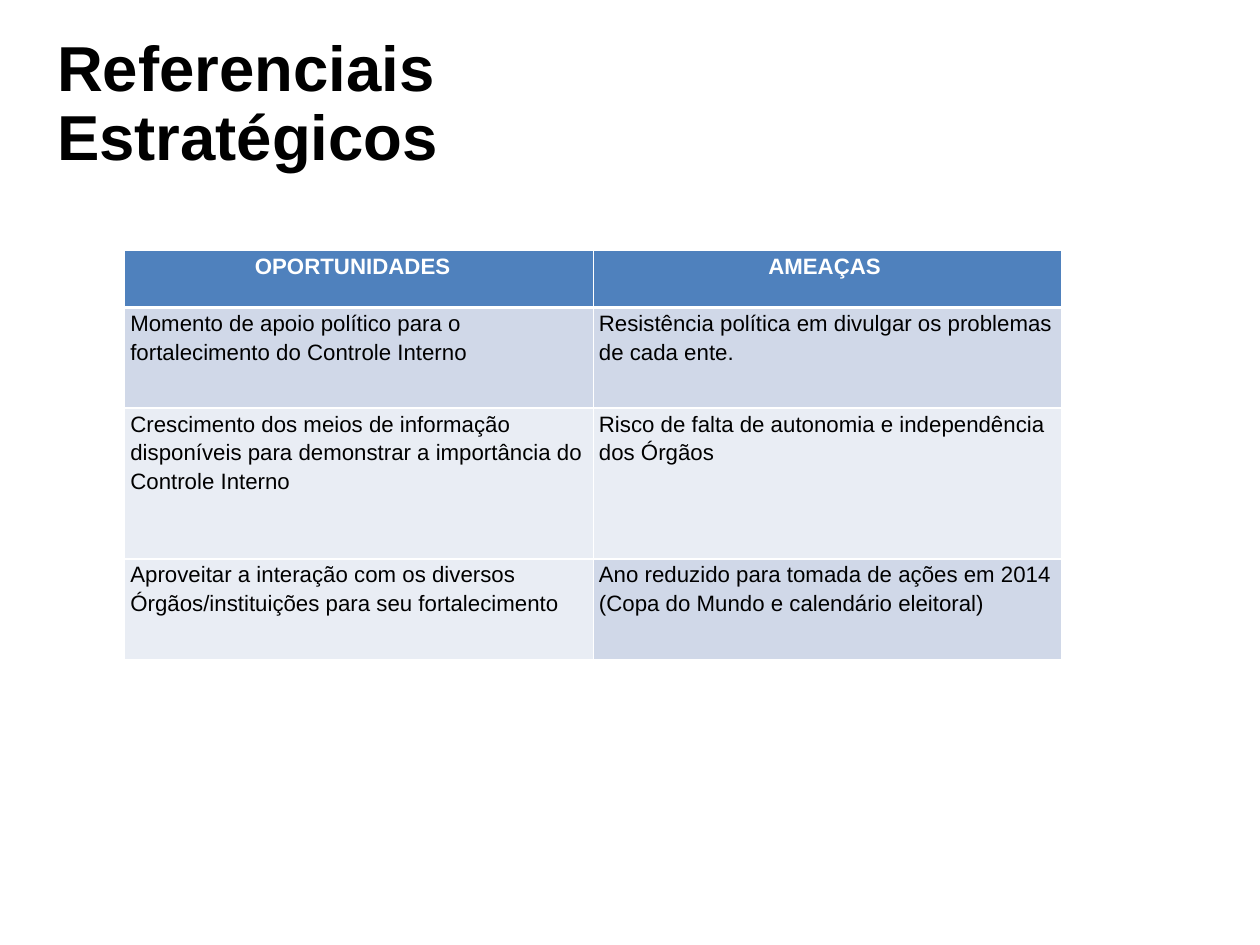
from lxml import etree
from pptx import Presentation
from pptx.dml.color import RGBColor
from pptx.enum.text import MSO_ANCHOR, MSO_AUTO_SIZE, PP_ALIGN
from pptx.oxml.ns import qn
from pptx.util import Inches, Pt

LEFT, CENTER = PP_ALIGN.LEFT, PP_ALIGN.CENTER
MIDDLE, TOP = MSO_ANCHOR.MIDDLE, MSO_ANCHOR.TOP
NO_FIT = MSO_AUTO_SIZE.NONE

WHITE, BLACK = "FFFFFF", "000000"
BLUE, MID, PALE = "4F81BD", "D0D8E8", "E9EDF4"


def style(font, size, color, bold):
    font.name = "Arial"
    font.size = Pt(size)
    font.bold = bold
    font.color.rgb = RGBColor.from_string(color)


def border(cell, side, width):
    line = etree.SubElement(cell._tc.get_or_add_tcPr(), qn(f"a:ln{side}"), w=str(Pt(width)))
    fill = etree.SubElement(line, qn("a:solidFill"))
    etree.SubElement(fill, qn("a:srgbClr"), val=WHITE)


deck = Presentation()
deck.slide_width = Inches(28 / 2.54)
deck.slide_height = Inches(21 / 2.54)
slide = deck.slides.add_slide(deck.slide_layouts[5])

title = slide.shapes.title
title.left, title.top = Inches(0.5), Inches(0.3)
title.width, title.height = Inches(9), Inches(1.25)
frame = title.text_frame
frame.auto_size = NO_FIT
frame.word_wrap = False
frame.vertical_anchor = MIDDLE
frame.margin_left = frame.margin_right = frame.margin_top = frame.margin_bottom = 0
para = frame.paragraphs[0]
para.alignment = LEFT
para.line_spacing = 0.9
for index, word in enumerate(["Referenciais", "Estratégicos"]):
    if index:
        para.add_line_break()
    run = para.add_run()
    run.text = word
    style(run.font, 40, BLACK, True)

rows = [
    (0.5, [("OPORTUNIDADES", BLUE), ("AMEAÇAS", BLUE)]),
    (0.88, [
        ("Momento de apoio político para o fortalecimento do Controle Interno", MID),
        ("Resistência política em divulgar os problemas de cada ente.", MID),
    ]),
    (1.32, [
        ("Crescimento dos meios de informação disponíveis para demonstrar "
         "a importância do Controle Interno", PALE),
        ("Risco de falta de autonomia e independência dos Órgãos", PALE),
    ]),
    (0.88, [
        ("Aproveitar a interação com os diversos Órgãos/instituições "
         "para seu fortalecimento", PALE),
        ("Ano reduzido para tomada de ações em 2014 "
         "(Copa do Mundo e calendário eleitoral)", MID),
    ]),
]
insets = [0.16, 0.1]
table = slide.shapes.add_table(
    len(rows), 2, Inches(1.09), Inches(2.19), Inches(8.2), Inches(3.58)
).table
for column in table.columns:
    column.width = Inches(4.1)

for r, (height, cells) in enumerate(rows):
    table.rows[r].height = Inches(height)
    head = r == 0
    for c, (text, color) in enumerate(cells):
        cell = table.cell(r, c)
        cell.margin_left = Inches(0.05)
        cell.margin_right = Inches(insets[c] if head else 0.05)
        cell.margin_top = cell.margin_bottom = 0
        cell.vertical_anchor = TOP
        border(cell, "L", 1)
        border(cell, "R", 1)
        border(cell, "T", 1.5 if r == 1 else 1)
        border(cell, "B", 1.5 if head else 1)
        cell.fill.solid()
        cell.fill.fore_color.rgb = RGBColor.from_string(color)
        para = cell.text_frame.paragraphs[0]
        para.alignment = CENTER if head else LEFT
        para.line_spacing = 1.15
        run = para.add_run()
        run.text = text
        style(run.font, 14, WHITE if head else BLACK, head)

deck.save("out.pptx")
